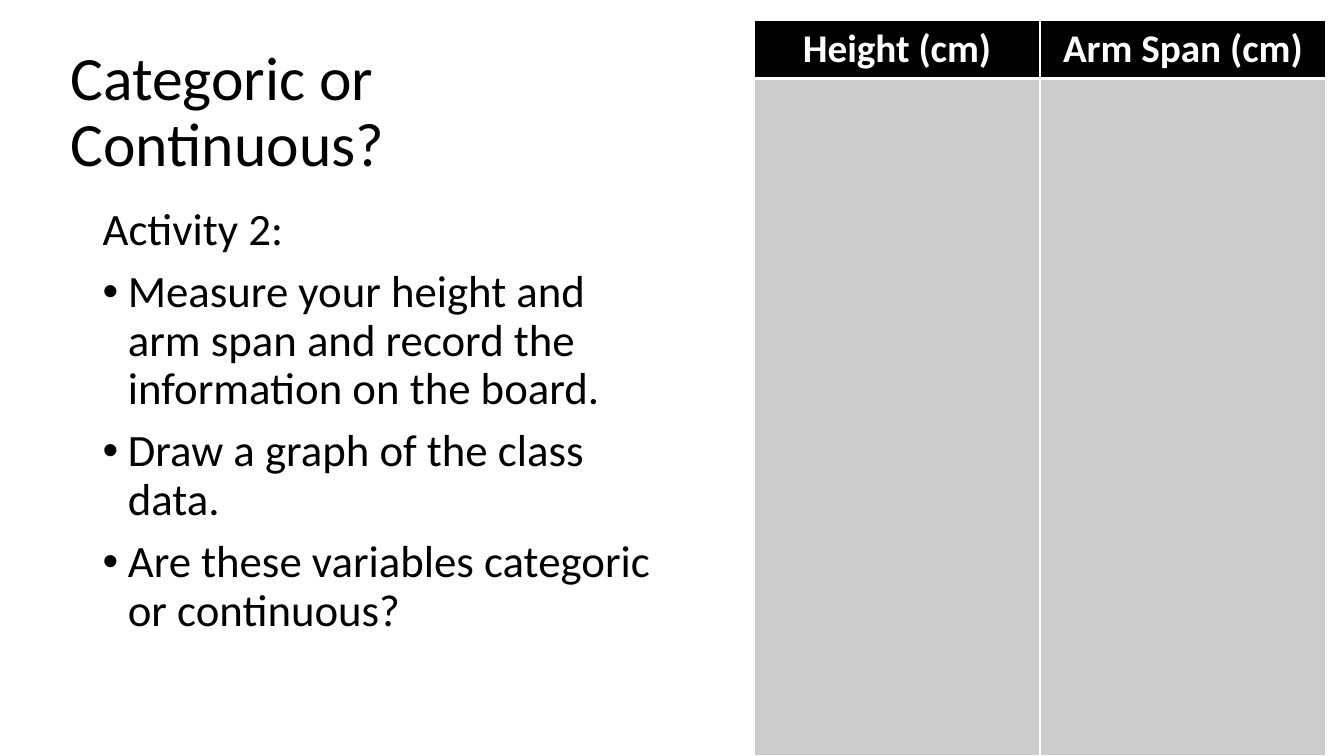
from lxml import etree
from pptx import Presentation
from pptx.dml.color import RGBColor
from pptx.enum.text import MSO_ANCHOR, PP_ALIGN
from pptx.oxml.ns import qn
from pptx.util import Inches, Pt

MIDDLE, TOP = MSO_ANCHOR.MIDDLE, MSO_ANCHOR.TOP
CENTER = PP_ALIGN.CENTER
WIDE, HIGH = 13.33, 7.5
FONT, INK, PAPER, GREY = "Calibri", "000000", "FFFFFF", "CCCCCC"
HEADS = ["Height (cm)", "Arm Span (cm)"]
TASKS = [
    "Measure your height and arm span and record the information on the board.",
    "Draw a graph of the class data.",
    "Are these variables categoric or continuous?",
]


def color(code):
    return RGBColor.from_string(code)


def write(para, text, size, ink=INK, bold=False, **form):
    """Put one run in a paragraph and apply its format values."""
    run = para.add_run()
    run.text = text
    font = {"name": FONT, "size": Pt(size), "bold": bold}
    for name, value in font.items():
        setattr(run.font, name, value)
    run.font.color.rgb = color(ink)
    for name, value in form.items():
        setattr(para, name, value)


def bullet(para):
    props = para._p.get_or_add_pPr()
    props.set("marL", str(Inches(0.25)))
    props.set("indent", str(Inches(-0.25)))
    etree.SubElement(props, qn("a:buFont"), typeface="Arial")
    etree.SubElement(props, qn("a:buChar"), char="•")


def border(cell, widths):
    """Draw white cell edges in the order left, right, top, bottom."""
    props = cell._tc.get_or_add_tcPr()
    for spot, (side, width) in enumerate(zip("LRTB", widths)):
        line = etree.Element(qn("a:ln" + side), w=str(Pt(width)))
        fill = etree.SubElement(line, qn("a:solidFill"))
        etree.SubElement(fill, qn("a:srgbClr"), val=PAPER)
        props.insert(spot, line)


def frame(slide, box, anchor):
    text = slide.shapes.add_textbox(*map(Inches, box)).text_frame
    text.word_wrap = True
    text.vertical_anchor = anchor
    return text


def title(slide, box):
    para = frame(slide, box, MIDDLE).paragraphs[0]
    write(para, "Categoric or Continuous?", 44, line_spacing=0.9)


def body(slide, box):
    text = frame(slide, box, TOP)
    form = {"line_spacing": 0.9, "space_before": Pt(10)}
    write(text.paragraphs[0], "Activity 2:", 32, **form)
    for task in TASKS:
        para = text.add_paragraph()
        write(para, task, 32, **form)
        bullet(para)


def record(slide, box, head):
    """Place the empty results table; head is the height of its first row."""
    left, top, width, height = map(Inches, box)
    table = slide.shapes.add_table(2, len(HEADS), left, top, width, height).table
    table.rows[0].height = Inches(head)
    table.rows[1].height = height - Inches(head)
    for col, name in enumerate(HEADS):
        table.columns[col].width = width // len(HEADS)
        write(table.cell(0, col).text_frame.paragraphs[0], name, 28,
              PAPER, True, alignment=CENTER)
        for row, (fill, edges) in enumerate([(INK, (1, 1, 1, 3)),
                                             (GREY, (1, 1, 3, 1))]):
            cell = table.cell(row, col)
            cell.fill.solid()
            cell.fill.fore_color.rgb = color(fill)
            border(cell, edges)


def main():
    deck = Presentation()
    deck.slide_width, deck.slide_height = Inches(WIDE), Inches(HIGH)
    slide = deck.slides.add_slide(deck.slide_layouts[6])
    title(slide, (0.6, 0.4, 6.3, 1.45))
    record(slide, (7.48, 0.2, 5.67, HIGH - 0.2), 0.58)
    body(slide, (0.92, 2, 5.67, 4.76))
    deck.save("out.pptx")


if __name__ == "__main__":
    main()
